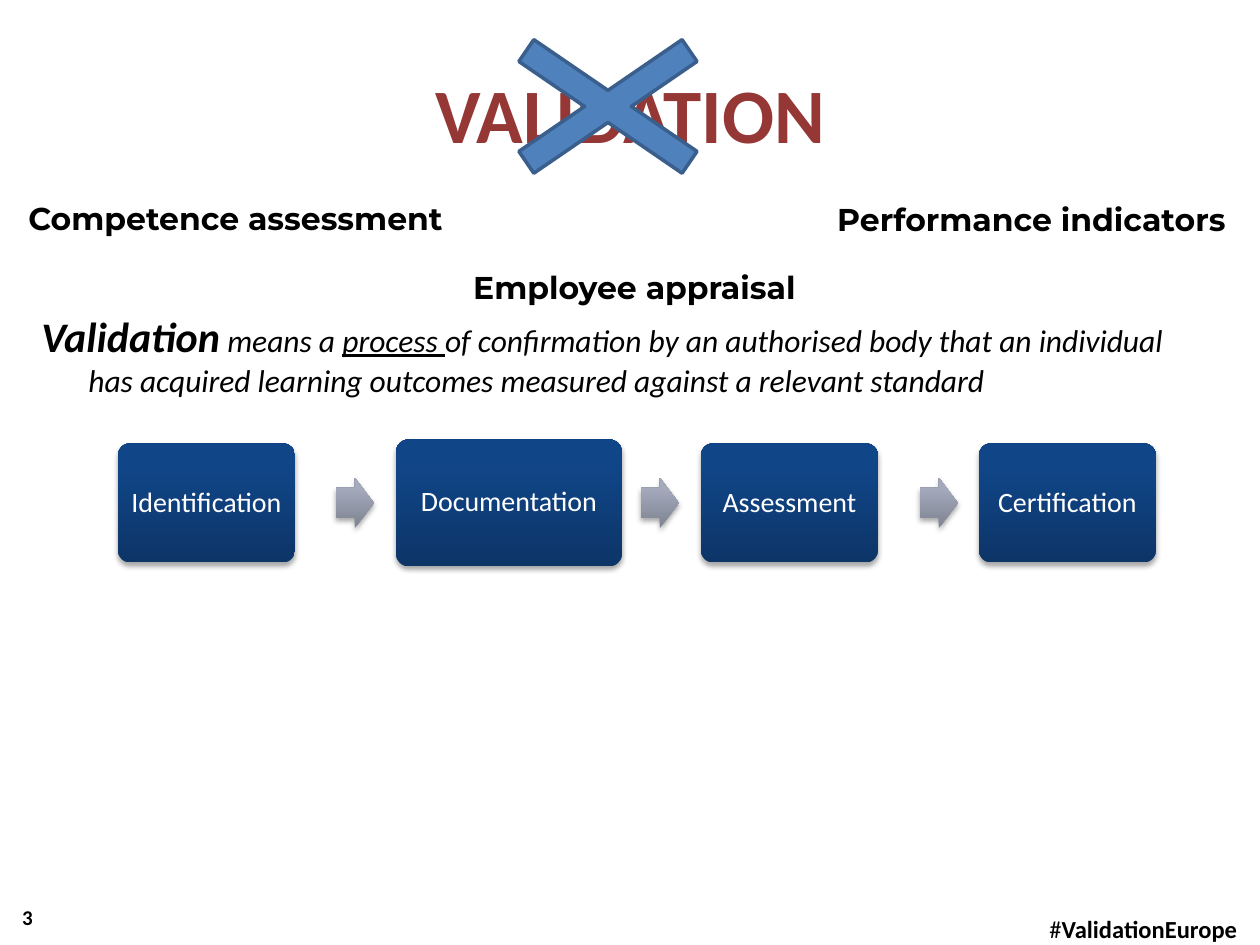
from lxml import etree
from pptx import Presentation
from pptx.dml.color import RGBColor
from pptx.enum.shapes import MSO_SHAPE
from pptx.enum.text import MSO_ANCHOR, PP_ALIGN
from pptx.oxml import parse_xml
from pptx.oxml.ns import nsdecls
from pptx.util import Pt

ROUNDED, ARROW, CROSS = (
    MSO_SHAPE.ROUNDED_RECTANGLE, MSO_SHAPE.RIGHT_ARROW, MSO_SHAPE.MATH_MULTIPLY)
MIDDLE, CENTER, LEFT = MSO_ANCHOR.MIDDLE, PP_ALIGN.CENTER, PP_ALIGN.LEFT

BLACK = RGBColor(0, 0, 0)
WHITE = RGBColor(0xFF, 0xFF, 0xFF)
RED = RGBColor(0x95, 0x37, 0x35)
NAVY_DARK = RGBColor(0x0D, 0x35, 0x68)
NAVY = RGBColor(0x10, 0x45, 0x87)
GREY_DARK = RGBColor(0x7E, 0x83, 0x91)
GREY = RGBColor(0xA4, 0xAA, 0xBC)
CROSS_FILL = RGBColor(0x4F, 0x81, 0xBD)
CROSS_LINE = RGBColor(0x3A, 0x5F, 0x8C)

SCALE = 914400 / 126
SHADOW = (
    f'<a:effectLst {nsdecls("a")}><a:outerShdw blurRad="39370" dist="22860" dir="5400000" '
    'rotWithShape="0"><a:srgbClr val="000000"><a:alpha val="35000"/></a:srgbClr>'
    '</a:outerShdw></a:effectLst>')


def px(*lengths):
    return [round(length * SCALE) for length in lengths]


def add_step_shape(kind, box, dark, light):
    shape = slide.shapes.add_shape(kind, *px(*box))
    shape.fill.gradient()
    shape.fill.gradient_angle = 90
    for stop, color, position in zip(shape.fill.gradient_stops, (dark, light), (0, 0.8)):
        stop.color.rgb = color
        stop.position = position
    shape.line.fill.background()
    shape._element.spPr.append(parse_xml(SHADOW))
    return shape


prs = Presentation()
prs.slide_width, prs.slide_height = px(1260, 945)
slide = prs.slides.add_slide(prs.slide_layouts[5])

title = slide.shapes.title
title.left, title.top, title.width, title.height = px(34, 71, 1193, 84)
title.text_frame.text = "VALIDATION"
title.text_frame.vertical_anchor = MIDDLE
heading = title.text_frame.paragraphs[0]
heading.alignment = CENTER
heading.font.name, heading.font.size, heading.font.bold = "Calibri", Pt(44), True
heading.font.color.rgb = RED

page_number = slide.shapes.add_textbox(*px(4, 893, 47, 49)).text_frame
page_number.vertical_anchor = MIDDLE
page_number.text = "3"
number = page_number.paragraphs[0]
number.alignment = CENTER
number.font.name, number.font.size, number.font.bold = "Calibri", Pt(12), True
number.font.color.rgb = BLACK

hashtag = slide.shapes.add_textbox(*px(1037, 916, 223, 26)).text_frame
hashtag.word_wrap = True
hashtag.vertical_anchor = MIDDLE
tag = hashtag.paragraphs[0]
tag.font.name, tag.font.size = "Calibri", Pt(14)
tag.font.color.rgb = BLACK
tag.add_run().text = "#"
tag_word = tag.add_run()
tag_word.text = "ValidationEurope"
tag_word.font.bold = True

hanging, = px(47)
definition_frame = slide.shapes.add_textbox(*px(29, 304, 1186, 102)).text_frame
definition_frame.word_wrap = True
definition = definition_frame.paragraphs[0]
definition._p.get_or_add_pPr().set("marL", str(hanging))
definition._p.get_or_add_pPr().set("indent", str(-hanging))
definition.font.name, definition.font.italic = "Calibri", True
definition.font.color.rgb = BLACK
for words, size, bold, underline in (
    ("Validation", 24, True, False),
    (" means a ", 18, False, False),
    ("process ", 18, False, True),
    ("of confirmation by an authorised body that an individual has acquired "
     "learning outcomes measured against a relevant standard", 18, False, False),
):
    run = definition.add_run()
    run.text = words
    run.font.size, run.font.bold, run.font.underline = Pt(size), bold, underline

MID_Y = 503
for name, left, width, height in (
    ("Identification", 118, 177, 119),
    ("Documentation", 396, 226, 127),
    ("Assessment", 701, 177, 119),
    ("Certification", 979, 177, 119),
):
    step = add_step_shape(ROUNDED, (left, MID_Y - height / 2, width, height), NAVY_DARK, NAVY)
    step.adjustments[0] = 0.1
    frame = step.text_frame
    frame.word_wrap = True
    frame.vertical_anchor = MIDDLE
    frame.margin_left, frame.margin_right = px(8, 8)
    frame.text = name
    label = frame.paragraphs[0]
    label.alignment, label.line_spacing = CENTER, 0.9
    label.font.name, label.font.size = "Calibri", Pt(16)
    label.font.color.rgb = WHITE

for left in (336, 641, 920):
    arrow = add_step_shape(ARROW, (left, MID_Y - 25, 38, 50), GREY_DARK, GREY)
    arrow.adjustments[0] = 0.6

for name, left, top, width in (
    ("Competence assessment", 11, 168, 495),
    ("Performance indicators", 820, 169, 440),
    ("Employee appraisal", 456, 237, 364),
):
    term = slide.shapes.add_shape(ROUNDED, *px(left, top, width, 100))
    term.shadow.inherit = False
    term.fill.background()
    term.line.fill.background()
    term.text_frame.word_wrap = False
    term.text_frame.vertical_anchor = MIDDLE
    term.text_frame.text = name
    label = term.text_frame.paragraphs[0]
    label._p.get_or_add_pPr().set("marL", str(hanging))
    label._p.get_or_add_pPr().set("indent", str(-hanging))
    label.alignment = LEFT
    label.font.name, label.font.size, label.font.bold = "Montserrat", Pt(18), True
    label.font.color.rgb = BLACK

cross = slide.shapes.add_shape(CROSS, *px(451, -1, 314, 215))
cross.adjustments[0] = 0.123
cross.shadow.inherit = False
cross.fill.solid()
cross.fill.fore_color.rgb = CROSS_FILL
cross.line.color.rgb = CROSS_LINE
cross.line.width = Pt(2)

prs.save("out.pptx")
